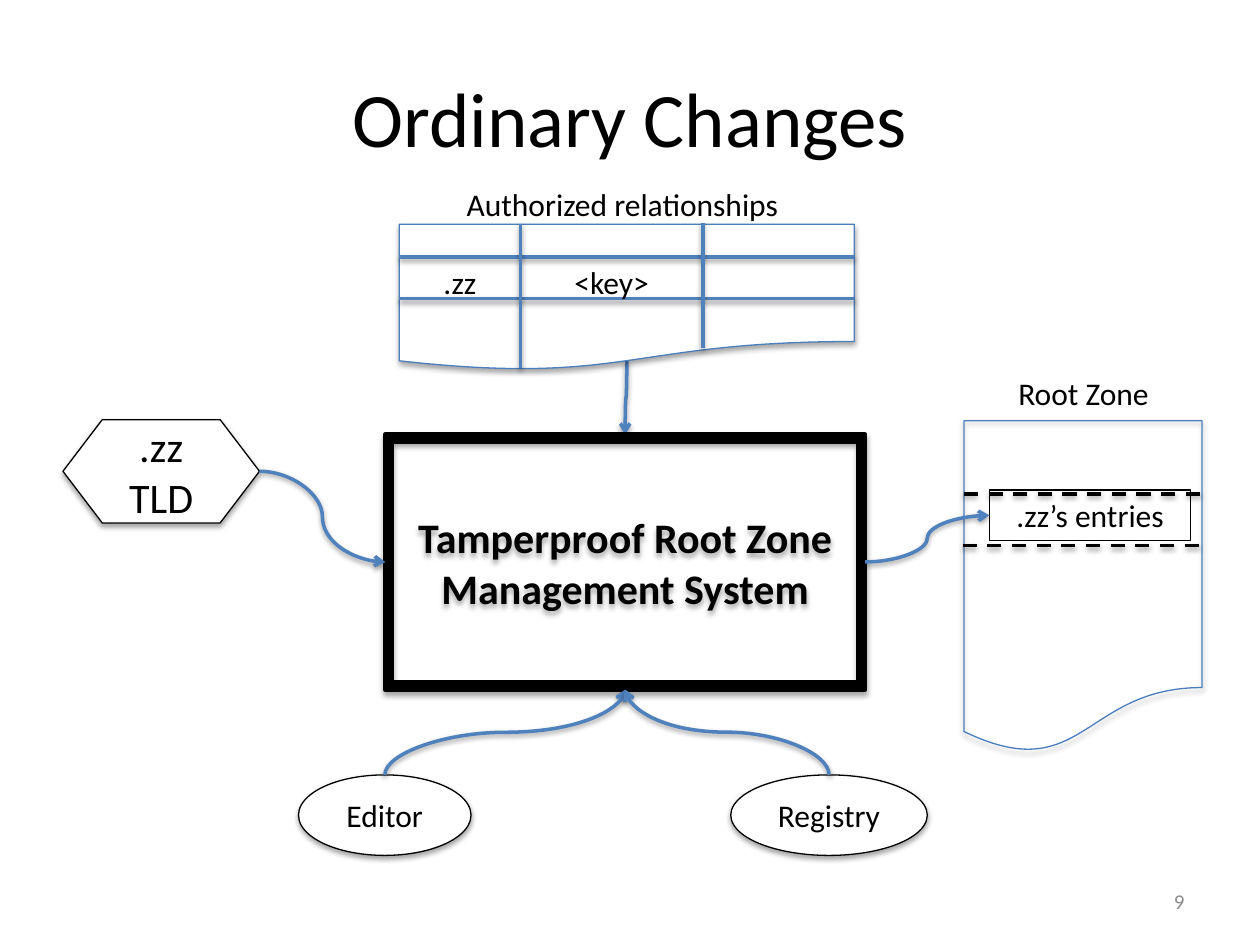
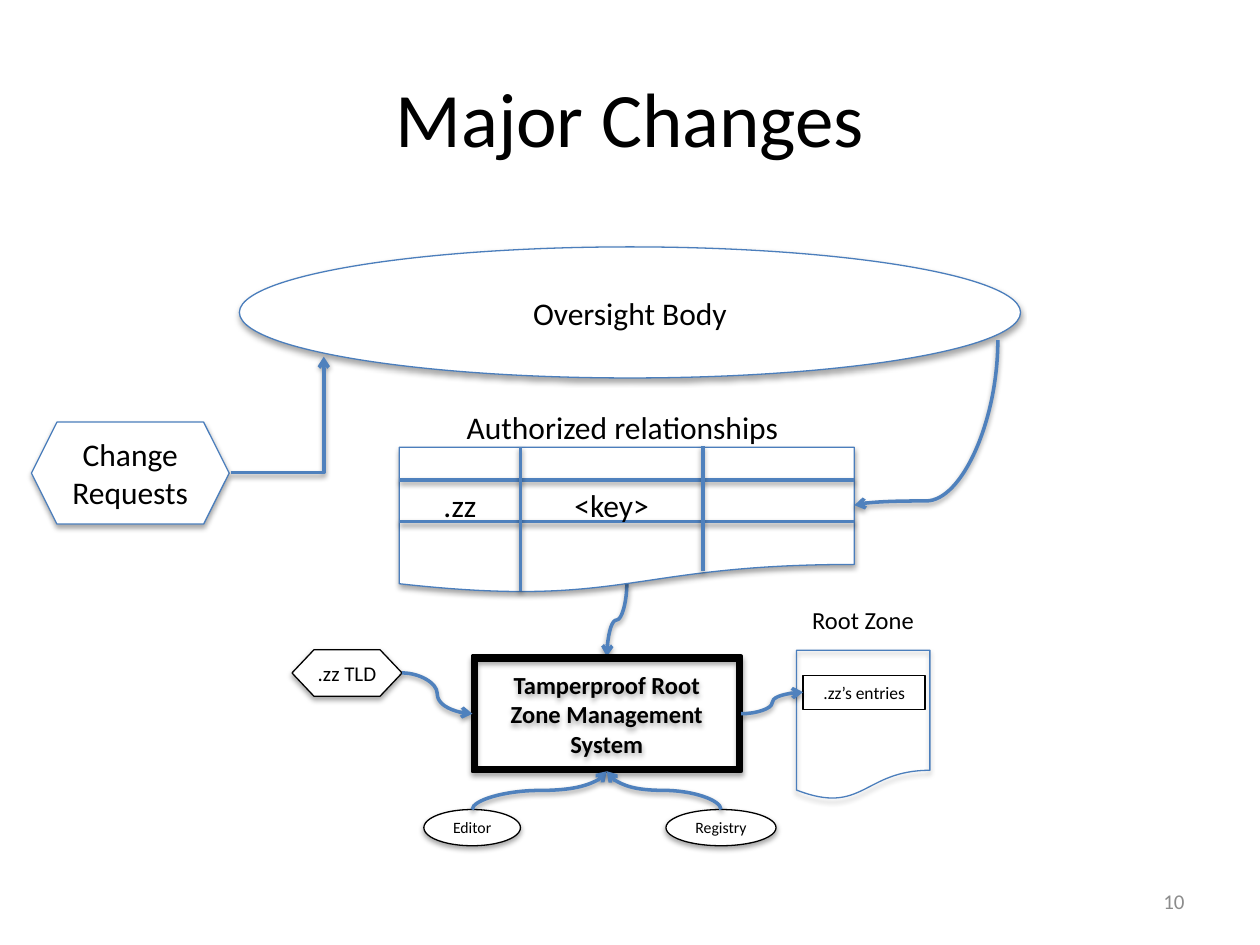
"""Build two slides on ordinary and major changes to a root zone."""
from dataclasses import dataclass

from pptx import Presentation
from pptx.dml.color import RGBColor
from pptx.enum.dml import MSO_LINE
from pptx.enum.shapes import MSO_CONNECTOR, MSO_SHAPE
from pptx.enum.text import MSO_ANCHOR, PP_ALIGN
from pptx.oxml import parse_xml
from pptx.oxml.ns import nsdecls, qn
from pptx.util import Pt

DOCUMENT = MSO_SHAPE.FLOWCHART_DOCUMENT
PREPARATION = MSO_SHAPE.FLOWCHART_PREPARATION
HEXAGON, ELLIPSE, FRAME = MSO_SHAPE.HEXAGON, MSO_SHAPE.OVAL, MSO_SHAPE.FRAME
STRAIGHT, CURVE, ELBOW = MSO_CONNECTOR.STRAIGHT, MSO_CONNECTOR.CURVE, MSO_CONNECTOR.ELBOW
CENTER, RIGHT, MIDDLE = PP_ALIGN.CENTER, PP_ALIGN.RIGHT, MSO_ANCHOR.MIDDLE
DASH = MSO_LINE.DASH


@dataclass(frozen=True)
class Theme:
    font: str = "Calibri"
    black: RGBColor = RGBColor(0, 0, 0)
    white: RGBColor = RGBColor(255, 255, 255)
    gray: RGBColor = RGBColor(0x8C, 0x8C, 0x8C)
    outline: RGBColor = RGBColor(0x4B, 0x7E, 0xBC)
    arrow: RGBColor = RGBColor(0x4F, 0x81, 0xBD)
    title: int = 44
    body: int = 18
    number: int = 12
    thin: float = 0.75
    heavy: float = 2.25
    link: float = 2


T = Theme()
SHADOW = (
    f'<a:effectLst {nsdecls("a")}><a:outerShdw blurRad="39370" dist="{{}}" dir="5400000" '
    'rotWithShape="0"><a:srgbClr val="000000"><a:alpha val="{}"/></a:srgbClr>'
    "</a:outerShdw></a:effectLst>"
)


def add_box(s, kind, box, text="", size=T.body, fill=None, line=None, width=T.thin,
            color=T.black, align=CENTER, bold=False):
    """Add a preset shape, or a text box when kind is None."""
    x, y, w, h = map(Pt, box)
    if kind is None:
        sp = s.shapes.add_textbox(x, y, w, h)
    else:
        sp = s.shapes.add_shape(kind, x, y, w, h)
    if fill is None:
        sp.fill.background()
    else:
        sp.fill.solid()
        sp.fill.fore_color.rgb = fill
    if line is None:
        sp.line.fill.background()
    else:
        sp.line.color.rgb = line
        sp.line.width = Pt(width)
    if kind is not None:
        sp._element.spPr.append(parse_xml(SHADOW.format(22860, 35000)))
    tf = sp.text_frame
    tf.word_wrap = True
    tf.vertical_anchor = MIDDLE
    tf.text = text
    for p in tf.paragraphs:
        p.alignment = align
        for r in p.runs:
            r.font.name, r.font.size, r.font.bold = T.font, Pt(size), bold
            r.font.color.rgb = color
    return sp


def add_link(s, kind, start, end, vertical=False, color=T.arrow, dash=None, bend=None):
    """Add a line; bent kinds get an arrowhead, vertical ones leave up or down."""
    (x1, y1), (x2, y2) = start, end
    turn = 0
    if vertical:
        turn = 90 if y2 > y1 else 270
        sign = 1 if turn == 90 else -1
        mx, my = (x1 + x2) / 2, (y1 + y2) / 2
        dx, dy = sign * (y2 - y1) / 2, sign * (x1 - x2) / 2
        x1, y1, x2, y2 = mx - dx, my - dy, mx + dx, my + dy
    c = s.shapes.add_connector(kind, Pt(x1), Pt(y1), Pt(x2), Pt(y2))
    c.line.color.rgb = color
    c.line.width = Pt(T.link)
    if dash:
        c.line.dash_style = dash
    props = c._element.spPr
    if turn:
        props.find(qn("a:xfrm")).set("rot", str(turn * 60000))
    geom = props.find(qn("a:prstGeom"))
    if kind == ELBOW:
        geom.set("prst", "bentConnector2")
    if bend:
        geom.find(qn("a:avLst")).append(
            parse_xml(f'<a:gd {nsdecls("a")} name="adj1" fmla="val {bend}"/>'))
    if kind != STRAIGHT:
        props.find(qn("a:ln")).append(parse_xml(f'<a:tailEnd {nsdecls("a")} type="arrow"/>'))
    props.append(parse_xml(SHADOW.format(20320, 38000)))


prs = Presentation()
prs.slide_width, prs.slide_height = Pt(720), Pt(540)

SLIDES = [
    dict(title="Ordinary Changes", number=9, table_y=128.2, origin=(220.2, 248.3), scale=(1, 1),
         label=(561.6, 210.2, 115.2, 28.8), entries=(565.3, 280.1, 115.2, 28.8), tld_inset=7.2,
         sizes=dict(system=24, tld=24, label=18, entries=18, party=18)),
    dict(title="Major Changes", number=10, table_y=255.6, origin=(270, 375.1),
         scale=(0.56, 0.45),
         label=(453.6, 342, 79.2, 24.5), entries=(458.9, 385.9, 69.8, 19.4), tld_inset=0,
         sizes=dict(system=14, tld=12, label=14, entries=10, party=9)),
]
PARTS = dict(system=(0, 0, 274.1, 145.8), zone=(330.6, -7.8, 136.1, 190.1),
             tld=(-184.2, -8.5, 112.3, 59), editor=(-49.6, 194.5, 98.6, 46),
             registry=(197.4, 194.5, 112.3, 46))
TABLE_X, TABLE_W, TABLE_H = 228.2, 260, 83.5
COLUMNS = [297.5, 401.6]

for data in SLIDES:
    s = prs.slides.add_slide(prs.slide_layouts[6])
    sizes = data["sizes"]
    add_box(s, None, (36, 21.6, 648, 90), data["title"], T.title)
    add_box(s, None, (516.2, 500.4, 167.8, 28.8), str(data["number"]), T.number,
            color=T.gray, align=RIGHT)

    (ox, oy), (kx, ky) = data["origin"], data["scale"]
    at = {name: (ox + x * kx, oy + y * ky, w * kx, h * ky)
          for name, (x, y, w, h) in PARTS.items()}
    x, y, w, h = at["system"]
    left, right = (x, y + h / 2), (x + w, y + h / 2)
    top, bottom = (x + w / 2, y), (x + w / 2, y + h)

    ty = data["table_y"]
    add_link(s, CURVE, (TABLE_X + TABLE_W / 2, ty + 77.8), top, vertical=True)
    add_box(s, DOCUMENT, (TABLE_X, ty, TABLE_W, TABLE_H), fill=T.white, line=T.outline)
    for row in (18.7, 42.4):
        add_link(s, STRAIGHT, (TABLE_X, ty + row), (TABLE_X + TABLE_W, ty + row))
    for col, start, end in zip(COLUMNS, (0, -0.7), (82, 70.6)):
        add_link(s, STRAIGHT, (col, ty + start), (col, ty + end))
    for x1, x2, text in zip([TABLE_X] + COLUMNS, COLUMNS, (".zz", "<key>")):
        add_box(s, None, (x1, ty + 18.7, x2 - x1, 28.8), text)
    add_box(s, None, (237.6, ty - 25.9, 236.2, 28.8), "Authorized relationships")

    add_box(s, DOCUMENT, at["zone"], line=T.outline)
    if data["number"] == 9:
        for x1, y1 in ((550.8, 282.2), (550.1, 311.8)):
            add_link(s, STRAIGHT, (x1, y1), (x1 + 136.1, y1), color=T.black, dash=DASH)
    add_box(s, None, data["label"], "Root Zone", sizes["label"])
    add_box(s, None, data["entries"], ".zz’s entries", sizes["entries"], line=T.black)

    sp = add_box(s, FRAME, at["system"], "Tamperproof Root Zone Management System",
                 sizes["system"], T.black, T.black, T.heavy, bold=True)
    sp.adjustments[0] = 0.028
    sp = add_box(s, PREPARATION, at["tld"], ".zz TLD", sizes["tld"], T.white, T.black)
    tf = sp.text_frame
    tf.margin_left = tf.margin_right = Pt(data["tld_inset"])
    tf.margin_top = tf.margin_bottom = 0
    x, y, w, h = at["tld"]
    add_link(s, CURVE, (x + w, y + h / 2), left)
    x, y, w, h = data["entries"]
    add_link(s, CURVE, right, (x, y + h / 2))
    for name, text in (("editor", "Editor"), ("registry", "Registry")):
        add_box(s, ELLIPSE, at[name], text, sizes["party"], T.white, T.black)
        x, y, w, h = at[name]
        add_link(s, CURVE, (x + w / 2, y), bottom, vertical=True)

add_box(s, ELLIPSE, (136.8, 141.1, 446.4, 74.9), "Oversight Body", fill=T.white, line=T.outline)
add_box(s, HEXAGON, (18, 241.2, 113, 58.3), "Change\nRequests", fill=T.white, line=T.outline)
add_link(s, ELBOW, (131.8, 270), (185, 203.8))
add_link(s, CURVE, (570.2, 194.4), (488.2, 288.7), vertical=True, bend=97400)

prs.save("out.pptx")
